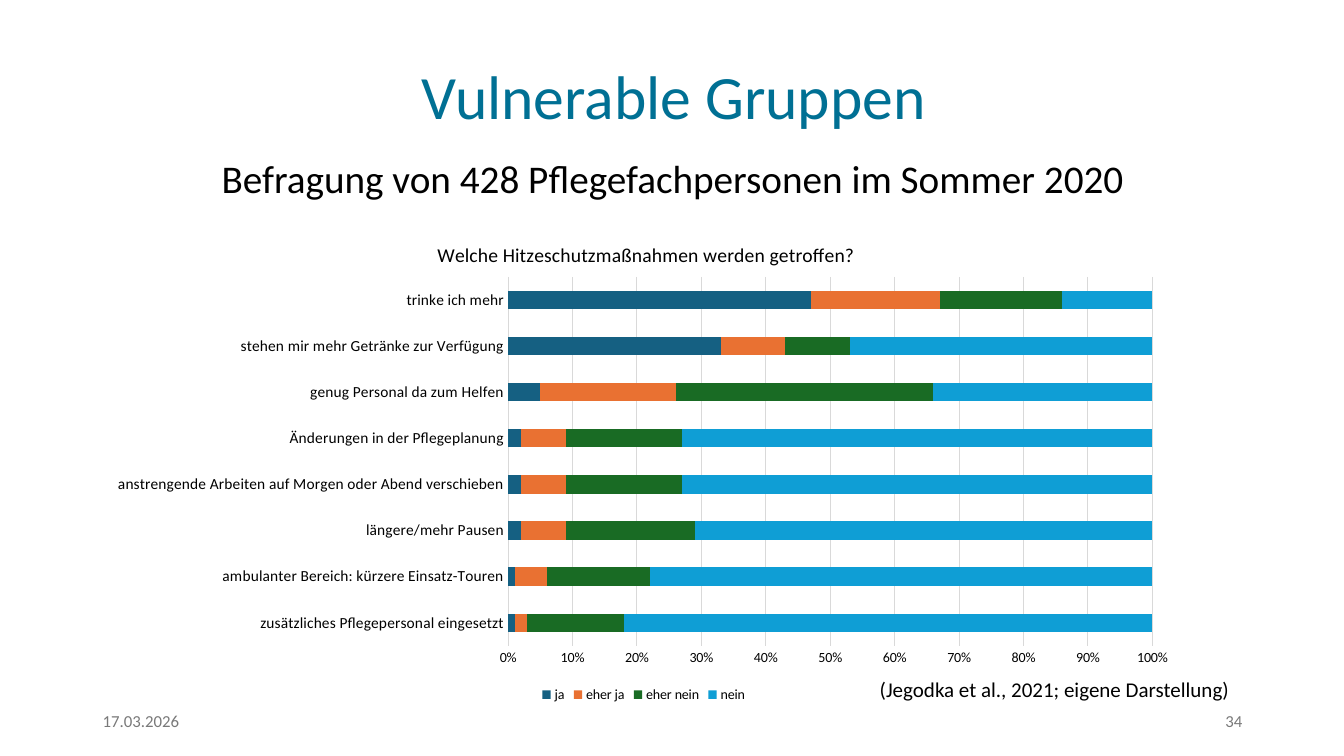
import pptx
import pptx.chart.data
import pptx.dml.color
import pptx.enum.chart
import pptx.enum.text
import pptx.oxml
import pptx.oxml.ns
import pptx.util
from pptx.util import Inches

RGBColor = pptx.dml.color.RGBColor
ALIGN = pptx.enum.text.PP_ALIGN
ANCHOR = pptx.enum.text.MSO_ANCHOR
TICK = pptx.enum.chart.XL_TICK_MARK

# Content
FONT = "Calibri"
BLACK = RGBColor(0x00, 0x00, 0x00)
PETROL = RGBColor(0x00, 0x70, 0x94)
GREY = RGBColor(0x79, 0x79, 0x79)
GRID = RGBColor(0xD9, 0xD9, 0xD9)

TITLE = "Vulnerable Gruppen"
SUBTITLE = "Befragung von 428 Pflegefachpersonen im Sommer 2020"
SOURCE = "(Jegodka et al., 2021; eigene Darstellung)"
DATE = "17.03.2026"
PAGE = "34"
CHART_TITLE = "Welche Hitzeschutzmaßnahmen werden getroffen?"
ANSWERS = [
    ("ja", RGBColor(0x15, 0x60, 0x82)),
    ("eher ja", RGBColor(0xE9, 0x71, 0x32)),
    ("eher nein", RGBColor(0x19, 0x6B, 0x24)),
    ("nein", RGBColor(0x0F, 0x9E, 0xD5)),
]
# Percentages per measure, from the bottom bar to the top bar
MEASURES = [
    ("zusätzliches Pflegepersonal eingesetzt", (1, 2, 15, 82)),
    ("ambulanter Bereich: kürzere Einsatz-Touren", (1, 5, 16, 78)),
    ("längere/mehr Pausen", (2, 7, 20, 71)),
    ("anstrengende Arbeiten auf Morgen oder Abend verschieben", (2, 7, 18, 73)),
    ("Änderungen in der Pflegeplanung", (2, 7, 18, 73)),
    ("genug Personal da zum Helfen", (5, 21, 40, 34)),
    ("stehen mir mehr Getränke zur Verfügung", (33, 10, 10, 47)),
    ("trinke ich mehr", (47, 20, 19, 14)),
]


def set_font(font, size, color=BLACK):
    font.name = FONT
    font.size = pptx.util.Pt(size)
    font.bold = False
    font.color.rgb = color


def add_text(slide, text, *, box, size, color=BLACK, align=ALIGN.LEFT,
             anchor=ANCHOR.MIDDLE, wrap=True, line_spacing=None):
    shape = slide.shapes.add_textbox(*map(Inches, box))
    frame = shape.text_frame
    frame.word_wrap = wrap
    frame.vertical_anchor = anchor
    paragraph = frame.paragraphs[0]
    paragraph.alignment = align
    paragraph.line_spacing = line_spacing
    run = paragraph.add_run()
    run.text = text
    set_font(run.font, size, color)


def make_layout(target=None, **fractions):
    """Manual chart layout; positions are fractions of the chart area."""
    parts = f'<c:layoutTarget val="{target}"/>' if target else ""
    parts += '<c:xMode val="edge"/><c:yMode val="edge"/>'
    parts += "".join(f'<c:{key} val="{value}"/>' for key, value in fractions.items())
    return pptx.oxml.parse_xml(
        f'<c:layout {pptx.oxml.ns.nsdecls("c")}>'
        f"<c:manualLayout>{parts}</c:manualLayout></c:layout>")


def replace_layout(parent, layout, index):
    for old in parent.findall(pptx.oxml.ns.qn("c:layout")):
        parent.remove(old)
    parent.insert(index, layout)


def add_survey_chart(slide, box):
    data = pptx.chart.data.CategoryChartData(number_format="General")
    data.categories = [label for label, _ in MEASURES]
    for index, (answer, _) in enumerate(ANSWERS):
        data.add_series(answer, [values[index] for _, values in MEASURES])
    chart = slide.shapes.add_chart(
        pptx.enum.chart.XL_CHART_TYPE.BAR_STACKED_100,
        *map(Inches, box), data).chart
    set_font(chart.font, 10)

    # Heading and legend
    chart.has_title = True
    paragraph = chart.chart_title.text_frame.paragraphs[0]
    run = paragraph.add_run()
    run.text = CHART_TITLE
    set_font(run.font, 14)
    chart.chart_title.include_in_layout = False
    replace_layout(chart.chart_title._element, make_layout(x=0.308, y=0.04), 1)
    chart.has_legend = True
    chart.legend.position = pptx.enum.chart.XL_LEGEND_POSITION.BOTTOM
    chart.legend.include_in_layout = False
    set_font(chart.legend.font, 10)

    # Bars
    plot = chart.plots[0]
    plot.gap_width = 150
    plot.overlap = 100
    plot.vary_by_categories = False
    for series, (_, color) in zip(plot.series, ANSWERS):
        series.format.fill.solid()
        series.format.fill.fore_color.rgb = color
    plot_area = chart._chartSpace.chart.plotArea
    replace_layout(
        plot_area, make_layout("inner", x=0.376, y=0.121, w=0.589, h=0.755), 0)

    # Axes
    category_axis, value_axis = chart.category_axis, chart.value_axis
    for axis, size in ((category_axis, 11), (value_axis, 10)):
        axis.major_tick_mark = axis.minor_tick_mark = TICK.NONE
        set_font(axis.tick_labels.font, size)
    category_axis.has_major_gridlines = False
    value_axis.has_major_gridlines = True
    for line in (category_axis.format.line, value_axis.major_gridlines.format.line):
        line.color.rgb = GRID
        line.width = pptx.util.Pt(0.75)
    value_axis.format.line.fill.background()
    value_axis.tick_labels.number_format = "0%"
    value_axis.tick_labels.number_format_is_linked = False


def main():
    presentation = pptx.Presentation()
    presentation.slide_width = Inches(13.33)
    presentation.slide_height = Inches(7.5)
    slide = presentation.slides.add_slide(presentation.slide_layouts[6])

    # Footer
    add_text(slide, DATE, box=(0.92, 6.95, 3, 0.4), size=12, color=GREY)
    add_text(slide, PAGE, box=(9.42, 6.95, 3, 0.4), size=12, color=GREY,
             align=ALIGN.RIGHT)

    # Survey results with their source
    add_survey_chart(slide, (0.96, 2.16, 10.85, 4.85))
    add_text(slide, SOURCE, box=(8.59, 6.66, 3.7, 0.35), size=15,
             align=ALIGN.RIGHT, anchor=ANCHOR.TOP, wrap=False)

    # Headings
    add_text(slide, SUBTITLE, box=(0.92, 1.34, 11.5, 0.91), size=28,
             align=ALIGN.CENTER, line_spacing=0.9)
    add_text(slide, TITLE, box=(1.31, 0.43, 10.75, 1.11), size=44, color=PETROL,
             align=ALIGN.CENTER, line_spacing=0.9)

    presentation.save("out.pptx")


if __name__ == "__main__":
    main()
